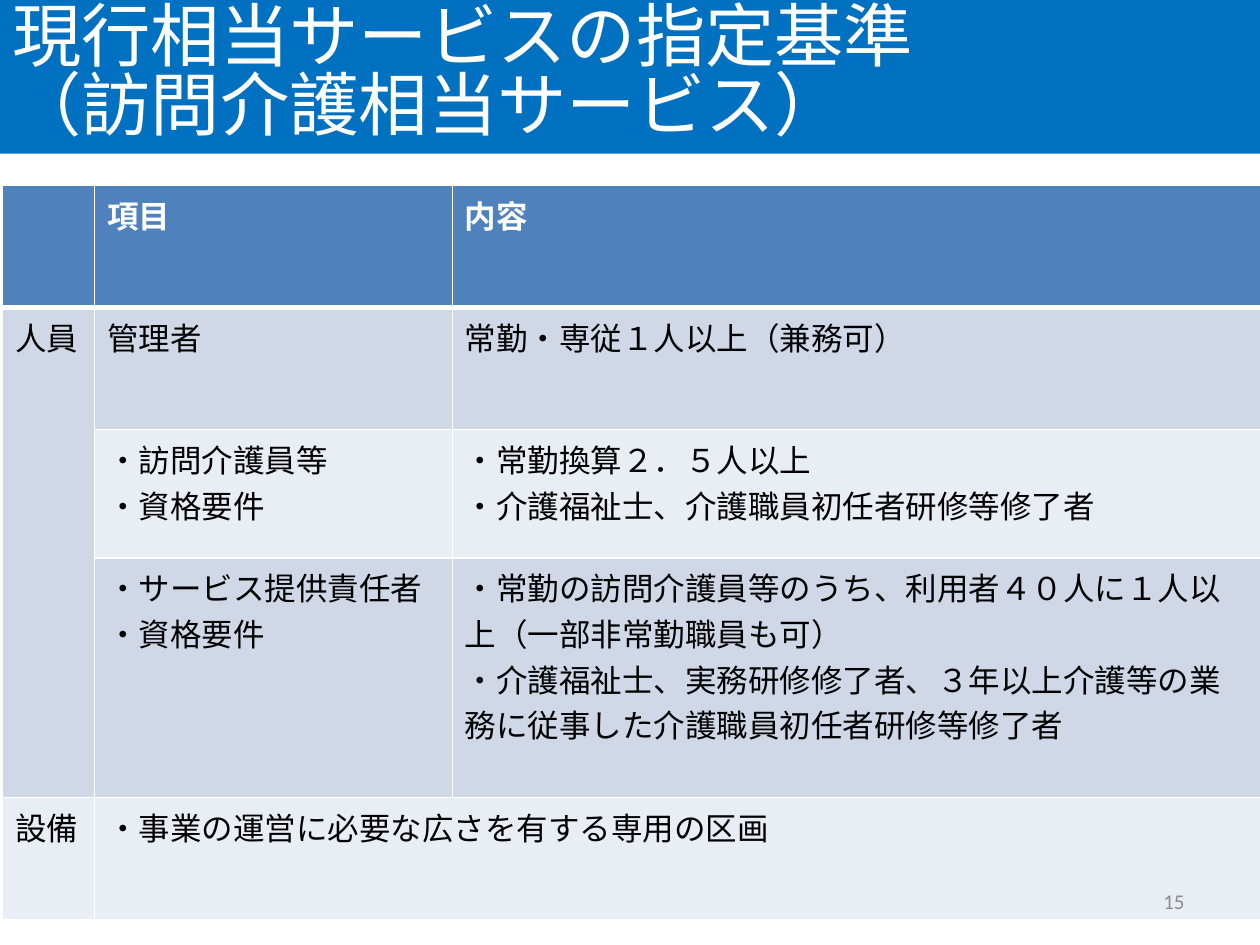
from lxml import etree
from pptx import Presentation
from pptx.dml.color import RGBColor
from pptx.enum import shapes, text
from pptx.oxml import ns
from pptx.util import Inches, Pt

FONT = "Calibri"
COLORS = {"banner": "0070C0", "header": "4F81BD", "dark": "D0D8E8", "light": "E9EDF4",
          "white": "FFFFFF", "black": "000000", "gray": "8C8C8C"}
COLS = [0.73, 2.84, 6.42]
ROWS = [0.97, 0.97, 1.02, 1.9, 0.97]
BANDS = ["header", "dark", "light", "dark", "light"]
CELLS = [
    ["", "項目", "内容"],
    ["人員", "管理者", "常勤・専従１人以上（兼務可）"],
    ["", "・訪問介護員等\n・資格要件",
     "・常勤換算２．５人以上\n・介護福祉士、介護職員初任者研修等修了者"],
    ["", "・サービス提供責任者\n・資格要件",
     "・常勤の訪問介護員等のうち、利用者４０人に１人以上（一部非常勤職員も可）\n"
     "・介護福祉士、実務研修修了者、３年以上介護等の業務に従事した介護職員初任者研修等修了者"],
    ["設備", "・事業の運営に必要な広さを有する専用の区画", ""],
]
MERGES = [((1, 0), (3, 0)), ((4, 1), (4, 2))]


def rgb(name):
    """Return the named palette colour."""
    return RGBColor.from_string(COLORS[name])


def write(tf, content, size, color, bold=False, align=text.PP_ALIGN.LEFT):
    """Fill a text frame and style each of its paragraphs."""
    tf.text = content
    tf.word_wrap = True
    for p in tf.paragraphs:
        p.alignment = align
        p.font.name, p.font.size, p.font.bold = FONT, Pt(size), bold
        p.font.color.rgb = rgb(color)


def add_banner(slide, width):
    """Add the title band across the top."""
    sp = slide.shapes.add_shape(shapes.MSO_SHAPE.RECTANGLE, 0, Inches(-0.03), width, Inches(1.25))
    sp.shadow.inherit = False
    sp.fill.solid()
    sp.fill.fore_color.rgb = rgb("banner")
    sp.line.fill.background()
    tf = sp.text_frame
    write(tf, "現行相当サービスの指定基準\v（訪問介護相当サービス）", 39.6, "white")
    tf.paragraphs[0].line_spacing = 0.84
    tf.vertical_anchor = text.MSO_ANCHOR.MIDDLE


def set_borders(cell, bottom):
    """Draw white borders around a cell with the given bottom width."""
    tc_pr = cell._tc.get_or_add_tcPr()
    for side, width in (("L", 1), ("R", 1), ("T", 1), ("B", bottom)):
        ln = etree.SubElement(tc_pr, ns.qn(f"a:ln{side}"), w=str(Pt(width)))
        fill = etree.SubElement(ln, ns.qn("a:solidFill"))
        etree.SubElement(fill, ns.qn("a:srgbClr"), val=COLORS["white"])


def add_standards(slide):
    """Add the table of designation standards."""
    table = slide.shapes.add_table(len(ROWS), len(COLS), Inches(0.02), Inches(1.47),
                                   Inches(sum(COLS)), Inches(sum(ROWS))).table
    for column, width in zip(table.columns, COLS):
        column.width = Inches(width)
    for i, (row, height) in enumerate(zip(table.rows, ROWS)):
        row.height = Inches(height)
        header = i == 0
        for cell, content in zip(row.cells, CELLS[i]):
            write(cell.text_frame, content, 18, "white" if header else "black", header)
            set_borders(cell, 3 if header else 1)
            cell.fill.solid()
            cell.fill.fore_color.rgb = rgb(BANDS[i])
    for start, end in MERGES:
        table.cell(*start).merge(table.cell(*end))


def add_page_number(slide):
    """Add the page number at the lower right."""
    tf = slide.shapes.add_textbox(Inches(7.17), Inches(6.95), Inches(2.33), Inches(0.4)).text_frame
    write(tf, "15", 12, "gray", align=text.PP_ALIGN.RIGHT)
    tf.vertical_anchor = text.MSO_ANCHOR.MIDDLE


def main():
    """Build and save the slide."""
    prs = Presentation()
    prs.slide_width, prs.slide_height = Inches(10), Inches(7.5)
    slide = prs.slides.add_slide(prs.slide_layouts[6])
    add_banner(slide, prs.slide_width)
    add_standards(slide)
    add_page_number(slide)
    prs.save("out.pptx")


if __name__ == "__main__":
    main()
